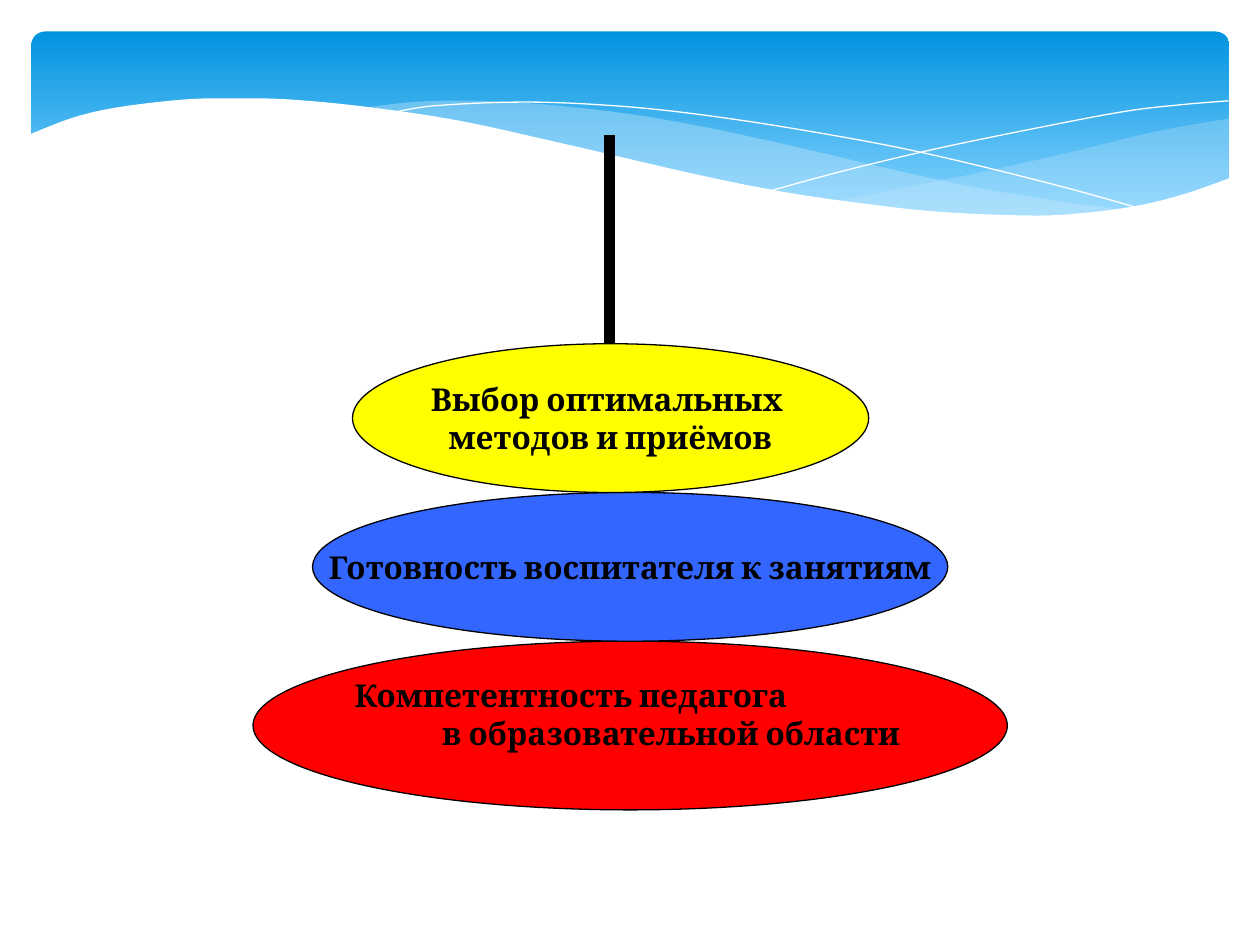
from pptx import Presentation
from pptx.dml.color import RGBColor
from pptx.enum.shapes import MSO_CONNECTOR as Connector, MSO_SHAPE as Shape
from pptx.enum.text import MSO_ANCHOR as Anchor, PP_ALIGN as Align
from pptx.oxml.ns import qn
from pptx.util import Pt
from lxml.etree import SubElement

BLACK, WHITE, MIST = "000000", "FFFFFF", "C6E7FC"

RIGHT_SWELL = (
    [(684.7, 49.7), (655.2, 54.7), (634.3, 59), (601.9, 67), (561.6, 76.3),
     (506.9, 87.8), (457.9, 97.2)],
    [(457.9, 97.2), (499.7, 102.2), (535.7, 105.1), (568.1, 105.8),
     (596.9, 104.4), (627.8, 100.8), (655.2, 94.3), (684.7, 83.5)],
)
MIDDLE_SWELL = (
    [(625, 102.2), (584.6, 96.5), (540, 89.3), (490.3, 78.5), (434.9, 65.5),
     (381.6, 54), (334.1, 46.1), (284.4, 41), (248.4, 39.6), (218.2, 40.3),
     (187.9, 43.9)],
    [(187.9, 43.9), (228.2, 49.7), (272.9, 58.3), (305.3, 65.5), (363.6, 79.2),
     (414.7, 90), (460.8, 97.9), (501.8, 103), (538.6, 105.8), (571, 106.6),
     (599, 105.1), (625, 102.2)],
)
FALLING_LINE = [(204.5, 46.8), (229.7, 42.5), (281.5, 40.3), (334.1, 42.5),
                (382.3, 47.5), (439.9, 56.2), (505.4, 68.4), (580.3, 86.4),
                (635, 101.5)]
RISING_LINE = [(423.4, 90.7), (465.8, 79.2), (520.6, 66.2), (583.9, 53.3),
               (626.4, 45.4), (657.4, 41.8), (684, 39.6)]
WHITE_WAVE = (
    [(685.4, 83.5), (658.8, 92.9), (629.3, 100.1), (594, 104.4), (564.5, 105.1),
     (517.7, 103), (477.4, 98.6), (432.7, 92.2), (381.6, 82.1), (303.8, 64.1),
     (244.8, 51.1), (192.2, 43.2), (147.6, 38.9), (115.2, 38.2), (87.1, 38.9),
     (50.4, 43.2), (24.5, 49), (-1.4, 59)],
    [(-1.4, 143.3), (685.4, 143.3)],
)


def color(value):
    return RGBColor.from_string(value)


def paint(shape, fill=None, line=None, width=0.75, alpha=None):
    shape.shadow.inherit = False
    if fill:
        shape.fill.solid()
        shape.fill.fore_color.rgb = color(fill)
        if alpha:
            tone = shape.fill._xPr.find(qn("a:solidFill"))[0]
            SubElement(tone, qn("a:alpha")).set("val", str(alpha * 1000))
    else:
        shape.fill.background()
    if line:
        shape.line.color.rgb = color(line)
        shape.line.width = Pt(width)
    else:
        shape.line.fill.background()


def smooth(points, steps=6):
    if len(points) < 3:
        return points
    padded = [points[0], *points, points[-1]]
    curve = [points[0]]
    for a, b, c, d in zip(padded, padded[1:], padded[2:], padded[3:]):
        for step in range(1, steps + 1):
            t = step / steps
            curve.append(tuple(
                0.5 * (2 * q + (r - p) * t + (2 * p - 5 * q + 4 * r - s) * t ** 2
                       + (3 * q - p - 3 * r + s) * t ** 3)
                for p, q, r, s in zip(a, b, c, d)))
    return curve


def add_outline(page, box, edges, closed=True):
    left, top = box[:2]
    points = [(Pt(left + x), Pt(top + y)) for edge in edges for x, y in smooth(edge)]
    builder = page.shapes.build_freeform(*points[0])
    builder.add_line_segments(points[1:], close=closed)
    return builder.convert_to_shape()


def add_banner(page, box):
    sky = page.shapes.add_shape(Shape.ROUNDED_RECTANGLE, *map(Pt, box))
    sky.adjustments[0] = 0.07
    paint(sky)
    sky.fill.gradient()
    sky.fill.gradient_angle = 270
    stops = zip(sky.fill.gradient_stops, (0, 0.9), ("0293E0", "83D3FE"))
    for stop, position, tone in stops:
        stop.position = position
        stop.color.rgb = color(tone)
    for swell, alpha in ((RIGHT_SWELL, 29), (MIDDLE_SWELL, 40)):
        paint(add_outline(page, box, swell), MIST, alpha=alpha)
    for stroke in (FALLING_LINE, RISING_LINE):
        paint(add_outline(page, box, [stroke], False), line=WHITE, width=0)
    paint(add_outline(page, box, WHITE_WAVE), WHITE)


def write(frame, lines, align):
    for index, line in enumerate(lines):
        para = frame.add_paragraph() if index else frame.paragraphs[0]
        para.alignment = align
        span = para.add_run()
        span.text = line
        span.font.name = "Cambria"
        span.font.size = Pt(18)
        span.font.bold = True
        span.font.color.rgb = color(BLACK)


def add_ring(page, box, fill, lines=()):
    ring = page.shapes.add_shape(Shape.OVAL, *map(Pt, box))
    paint(ring, fill, BLACK)
    ring.text_frame.word_wrap = False
    ring.text_frame.vertical_anchor = Anchor.MIDDLE
    write(ring.text_frame, lines, Align.CENTER)


def add_rod(page, x, top, bottom):
    rod = page.shapes.add_connector(Connector.STRAIGHT, *map(Pt, (x, top, x, bottom)))
    rod.line.color.rgb = color(BLACK)
    rod.line.width = Pt(6)
    SubElement(rod._element.spPr, qn("a:effectLst"))


def add_base_label(page, box, lines):
    label = page.shapes.add_textbox(*map(Pt, box))
    label.text_frame.word_wrap = True
    write(label.text_frame, lines, Align.LEFT)
    label.text_frame.paragraphs[1]._p.get_or_add_pPr().set("marL", str(Pt(50)))


def add_pyramid(page, box):
    left, top, width, height = box
    ring_height = 85
    base_top = top + 2 * ring_height
    add_ring(page, (left, base_top, width, height - 2 * ring_height), "FF0000")
    add_rod(page, left + 203.8, top - 119.5, base_top)
    add_base_label(page, (left + 51, base_top + 16.5, 357, 51),
                   ["Компетентность педагога", "в образовательной области"])
    add_ring(page, (left + 34, top + ring_height, 363, ring_height), "3366FF",
             ["Готовность воспитателя к занятиям"])
    add_ring(page, (left + 56.8, top, 295, ring_height), "FFFF00",
             ["Выбор оптимальных ", "методов и приёмов"])


def main():
    deck = Presentation()
    deck.slide_width, deck.slide_height = Pt(720), Pt(540)
    page = deck.slides.add_slide(deck.slide_layouts[6])
    add_banner(page, (18, 18, 684.5, 112.3))
    add_pyramid(page, (144.6, 196.4, 431, 266.4))
    deck.save("out.pptx")


if __name__ == "__main__":
    main()
